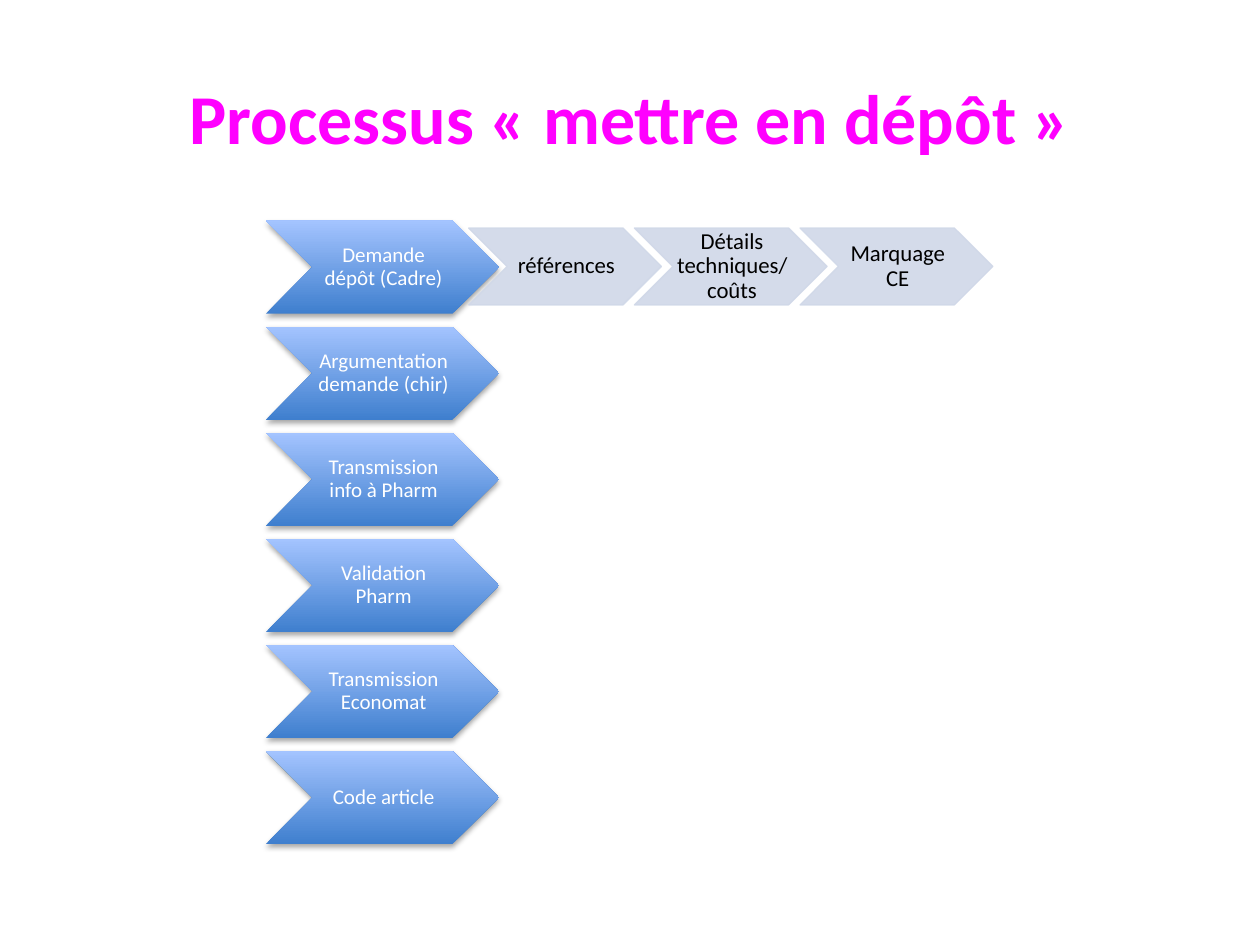
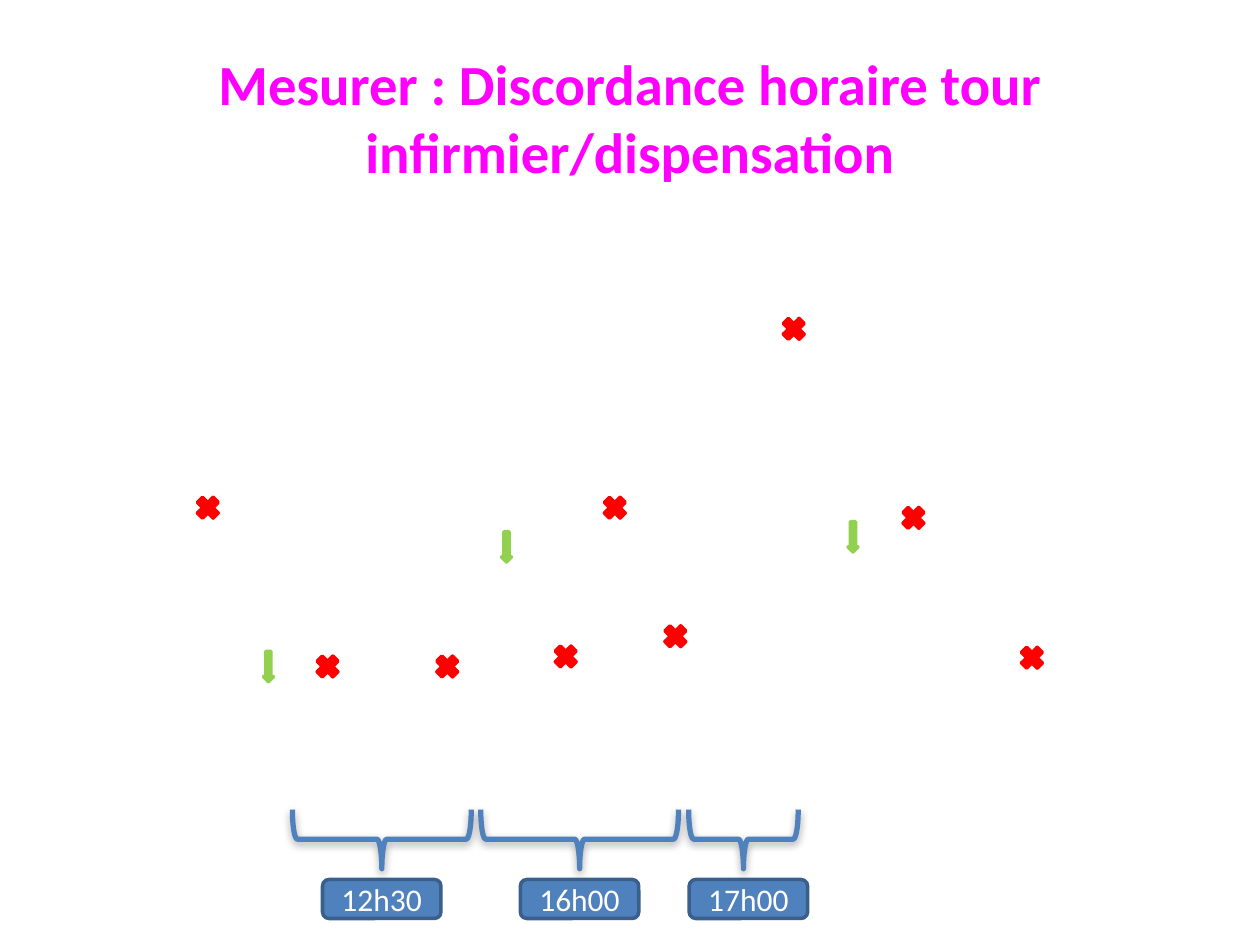
from lxml.etree import SubElement
from pptx import Presentation
from pptx.dml.color import RGBColor
from pptx.enum.shapes import MSO_SHAPE
from pptx.enum.text import MSO_ANCHOR, MSO_AUTO_SIZE, PP_ALIGN
from pptx.oxml.ns import qn
from pptx.util import Inches, Pt

FONT = "Calibri"
MAGENTA = RGBColor(0xFF, 0x00, 0xFF)
WHITE = RGBColor(0xFF, 0xFF, 0xFF)
BLACK = RGBColor(0x00, 0x00, 0x00)
BLUE = RGBColor(0x4F, 0x81, 0xBD)
DARK_BLUE = RGBColor(0x3A, 0x5F, 0x8C)
STEP_BOTTOM = RGBColor(0x3F, 0x7F, 0xCE)
STEP_TOP = RGBColor(0xA4, 0xC4, 0xFF)
PALE_BLUE = RGBColor(0xD0, 0xD8, 0xE8)
GREEN = RGBColor(0x92, 0xD0, 0x50)
RED = RGBColor(0xFF, 0x00, 0x00)

STEPS = ["Demande dépôt (Cadre)", "Argumentation demande (chir)",
         "Transmission info à Pharm", "Validation Pharm",
         "Transmission Economat", "Code article"]
REQUEST_DETAILS = ["références", "Détails techniques/coûts", "Marquage CE"]
STEP_W, STEP_H, STEP_PITCH = 1.85, 0.74, 0.842
DETAIL_W, DETAIL_H, DETAIL_PITCH = 1.53, 0.61, 1.315

ARROWS = [(2.09, 5.17), (3.98, 4.22), (6.73, 4.14)]
CROSSES = [(1.53, 3.91), (2.48, 5.17), (3.43, 5.17), (4.76, 3.91), (4.37, 5.09),
           (5.24, 4.93), (6.18, 2.49), (7.13, 3.99), (8.07, 5.1)]
MARK_SIZE = 0.24
# Time, label left, brace centre, brace span
TIME_SLOTS = [("12h30", 2.56, 3.03, 1.42),
              ("16h00", 4.13, 4.6, 1.57),
              ("17h00", 5.47, 5.9, 0.87)]
BRACE_DEPTH, BRACE_MIDDLE = 0.47, 6.66


def write(tf, text, size, color, bold=False):
    tf.word_wrap = True
    tf.auto_size = MSO_AUTO_SIZE.NONE
    tf.vertical_anchor = MSO_ANCHOR.MIDDLE
    p = tf.paragraphs[0]
    p.alignment = PP_ALIGN.CENTER
    r = p.add_run()
    r.text = text
    r.font.name = FONT
    r.font.size = Pt(size)
    r.font.bold = bold
    r.font.color.rgb = color
    return p


def add_titled_slide(prs, text, size):
    s = prs.slides.add_slide(prs.slide_layouts[5])
    title = s.shapes.title
    title.left, title.top = Inches(0.5), Inches(0.3)
    title.width, title.height = Inches(9), Inches(1.25)
    write(title.text_frame, text, size, MAGENTA, bold=True)
    return s


def add_shape(s, kind, x, y, w, h, fill=None, line=None, line_width=2):
    """Add a preset shape without shadow; no fill or line unless a colour is given."""
    sp = s.shapes.add_shape(kind, Inches(x), Inches(y), Inches(w), Inches(h))
    sp.shadow.inherit = False
    if fill is None:
        sp.fill.background()
    else:
        sp.fill.solid()
        sp.fill.fore_color.rgb = fill
    if line is None:
        sp.line.fill.background()
    else:
        sp.line.color.rgb = line
        sp.line.width = Pt(line_width)
    return sp


def add_shadow(sp, blur):
    effects = sp._element.spPr.find(qn("a:effectLst"))
    shadow = SubElement(effects, qn("a:outerShdw"), blurRad=str(Pt(blur)),
                        dist=str(Pt(1.8)), dir="5400000", rotWithShape="0")
    color = SubElement(shadow, qn("a:srgbClr"), val="000000")
    SubElement(color, qn("a:alpha"), val="35000")


def set_opacity(sp, percent):
    """Apply the opacity to the fill and the line."""
    for color in sp._element.spPr.iter(qn("a:srgbClr")):
        SubElement(color, qn("a:alpha"), val=str(percent * 1000))


def write_in_chevron(sp, text, size, color):
    tf = sp.text_frame
    tf.margin_left, tf.margin_right = Inches(0.02), 0
    tf.margin_top = tf.margin_bottom = Inches(0.01)
    write(tf, text, size, color).line_spacing = 0.9


def add_step(s, x, y, text):
    sp = add_shape(s, MSO_SHAPE.CHEVRON, x, y, STEP_W, STEP_H)
    sp.fill.gradient()
    sp.fill.gradient_angle = 90
    for stop, color, position in zip(sp.fill.gradient_stops,
                                     (STEP_BOTTOM, STEP_TOP), (0, 1)):
        stop.color.rgb = color
        stop.position = position
    add_shadow(sp, 3.1)
    write_in_chevron(sp, text, 12, WHITE)


def add_detail(s, x, y, text):
    sp = add_shape(s, MSO_SHAPE.CHEVRON, x, y, DETAIL_W, DETAIL_H,
                   PALE_BLUE, PALE_BLUE, 0.75)
    set_opacity(sp, 90)
    write_in_chevron(sp, text, 13, BLACK)


def add_time_slot(s, time, label_x, brace_center, span):
    brace = add_shape(s, MSO_SHAPE.RIGHT_BRACE, brace_center - BRACE_DEPTH / 2,
                      BRACE_MIDDLE - span / 2, BRACE_DEPTH, span,
                      line=BLUE, line_width=3)
    brace.rotation = 90
    add_shadow(brace, 5)
    label = add_shape(s, MSO_SHAPE.ROUNDED_RECTANGLE, label_x, 6.98, 0.94, 0.31,
                      BLUE, DARK_BLUE)
    write(label.text_frame, time, 18, WHITE)


def build_process_slide(prs):
    s = add_titled_slide(prs, "Processus « mettre en dépôt »", 40)
    for i, text in enumerate(STEPS):
        add_step(s, 2.11, 1.75 + i * STEP_PITCH, text)
    for i, text in enumerate(REQUEST_DETAILS):
        add_detail(s, 3.72 + i * DETAIL_PITCH, 1.81, text)


def build_schedule_slide(prs):
    s = add_titled_slide(
        prs, "Mesurer : Discordance horaire tour infirmier/dispensation", 32.4)
    for x, y in ARROWS:
        add_shape(s, MSO_SHAPE.DOWN_ARROW, x, y, 0.08, MARK_SIZE, GREEN, GREEN)
    for x, y in CROSSES:
        add_shape(s, MSO_SHAPE.MATH_MULTIPLY, x, y, MARK_SIZE, MARK_SIZE, RED, RED)
    for slot in TIME_SLOTS:
        add_time_slot(s, *slot)


def main():
    prs = Presentation()
    prs.slide_width, prs.slide_height = Inches(10), Inches(7.5)
    build_process_slide(prs)
    build_schedule_slide(prs)
    prs.save("out.pptx")


if __name__ == "__main__":
    main()
